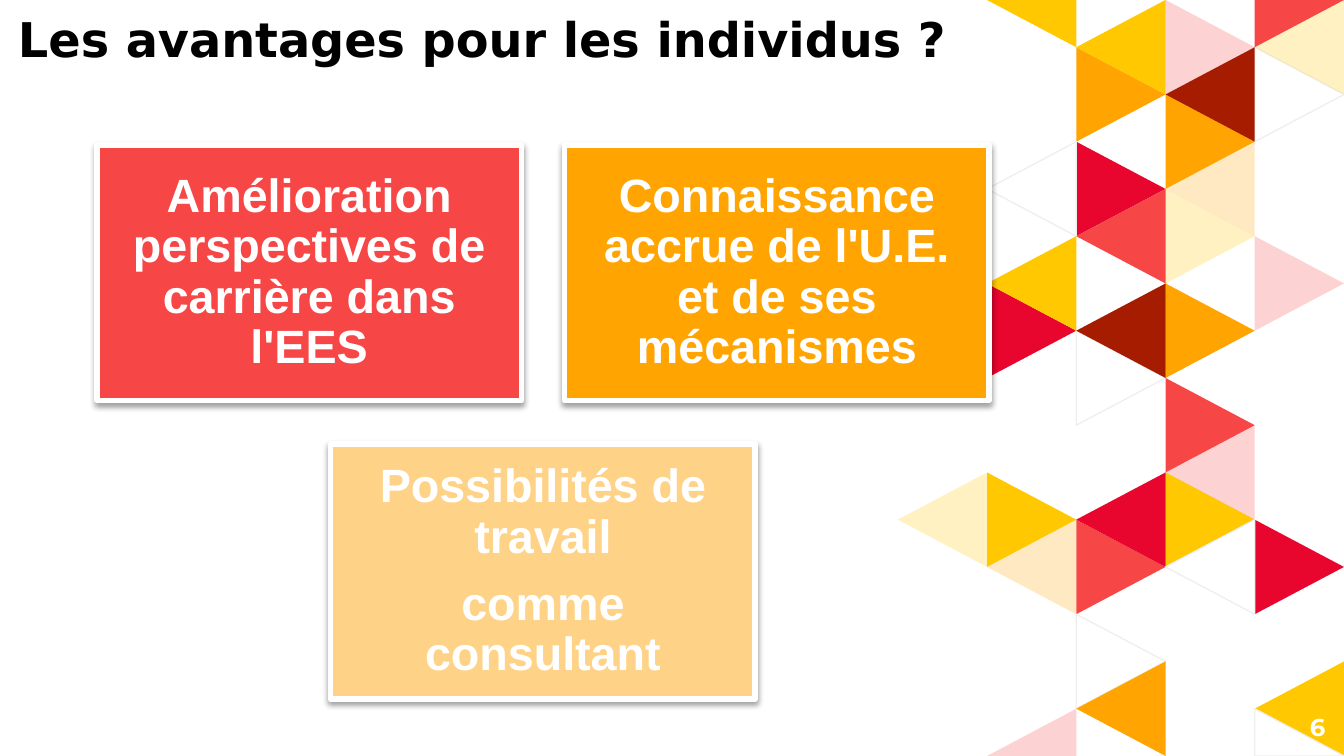
from dataclasses import dataclass
from typing import Optional

import lxml.etree
import pptx
import pptx.dml.color
import pptx.enum.shapes
import pptx.enum.text
import pptx.oxml.ns
import pptx.util

SLIDE_WIDTH = pptx.util.Inches(10)
SLIDE_HEIGHT = SLIDE_WIDTH * 9 // 16

MOSAIC_LEFT = 66.8
MOSAIC_COLUMNS = 5
MOSAIC_ROWS = 16

CARD_LEFT, CARD_TOP = 7.2, 19.2
CARD_WIDTH, CARD_HEIGHT = 31.6, 33.8
CARD_PITCH_X, CARD_PITCH_Y = 34.8, 39.5

RED, CRIMSON, BROWN = "F64646", "E8062F", "A61C00"
ORANGE, YELLOW, PEACH = "FFA400", "FFC800", "FFD387"
WHITE, BLACK, PALE_GREY = "FFFFFF", "000000", "EFEFEF"
PALE = 24


@dataclass
class Triangle:
    """A mosaic tile two rows high; it is cut off at the slide's edges."""
    column: int
    row: int
    points_right: bool
    color: Optional[str]
    opacity: int = 100
    outlined: bool = False


@dataclass
class Card:
    column: float
    row: int
    color: str
    lines: list[str]


@dataclass
class TextStyle:
    font: str
    size: float
    color: str
    alignment: pptx.enum.text.PP_ALIGN
    line_spacing: float = 1.0
    space_between: float = 0


TRIANGLES = [
    Triangle(2, 11, True, RED),
    Triangle(2, 13, True, WHITE, outlined=True),
    Triangle(3, 2, True, ORANGE),
    Triangle(4, 1, True, WHITE, outlined=True),
    Triangle(3, 4, True, YELLOW, PALE),
    Triangle(3, 10, True, YELLOW),
    Triangle(4, 11, True, CRIMSON),
    Triangle(3, 0, True, RED, PALE),
    Triangle(4, -1, True, RED),
    Triangle(2, 10, False, CRIMSON),
    Triangle(1, 11, False, ORANGE, PALE),
    Triangle(3, 1, False, BROWN),
    Triangle(3, 3, False, ORANGE, PALE),
    Triangle(3, 9, False, RED, PALE),
    Triangle(3, 11, False, WHITE, outlined=True),
    Triangle(1, -1, False, YELLOW),
    Triangle(1, 15, False, RED, PALE),
    Triangle(2, 14, False, ORANGE),
    Triangle(4, 0, False, YELLOW, PALE),
    Triangle(4, 14, False, YELLOW),
    Triangle(2, 1, True, ORANGE),
    Triangle(2, 3, True, CRIMSON),
    Triangle(1, 3, False, WHITE, outlined=True),
    Triangle(2, 4, False, RED),
    Triangle(2, 0, False, YELLOW),
    Triangle(4, 15, True, None, outlined=True),
    Triangle(1, 6, True, CRIMSON),
    Triangle(2, 7, True, WHITE, outlined=True),
    Triangle(1, 10, True, YELLOW),
    Triangle(3, 6, True, ORANGE),
    Triangle(3, 8, True, RED),
    Triangle(4, 5, True, RED, PALE),
    Triangle(0, 10, False, YELLOW, PALE),
    Triangle(1, 5, False, YELLOW),
    Triangle(2, 6, False, BROWN),
]

CARDS = [
    Card(0, 0, RED, ["Amélioration perspectives de carrière dans l'EES"]),
    Card(1, 0, ORANGE, ["Connaissance accrue de l'U.E. et de ses mécanismes"]),
    Card(0.5, 1, PEACH, ["Possibilités de travail", "comme consultant"]),
]

CENTER = pptx.enum.text.PP_ALIGN.CENTER
RIGHT = pptx.enum.text.PP_ALIGN.RIGHT
TITLE_STYLE = TextStyle("DejaVu Sans", 25.6, BLACK, CENTER, 0.8)
CARD_STYLE = TextStyle("Arial", 25, WHITE, CENTER, 0.9, 8.8)
NUMBER_STYLE = TextStyle("Montserrat", 13, WHITE, RIGHT)


def across(percent: float) -> int:
    return round(SLIDE_WIDTH * percent / 100)


def down(percent: float) -> int:
    return round(SLIDE_HEIGHT * percent / 100)


def rgb(color: str) -> pptx.dml.color.RGBColor:
    return pptx.dml.color.RGBColor.from_string(color)


def set_opacity(color_element, percent: int) -> None:
    alpha = lxml.etree.SubElement(color_element, pptx.oxml.ns.qn("a:alpha"))
    alpha.set("val", str(percent * 1000))


def paint(shape, color: Optional[str], line_color: Optional[str], line_width: float) -> None:
    shape.shadow.inherit = False
    if color:
        shape.fill.solid()
        shape.fill.fore_color.rgb = rgb(color)
    else:
        shape.fill.background()
    if line_color:
        shape.line.color.rgb = rgb(line_color)
        shape.line.width = pptx.util.Pt(line_width)
    else:
        shape.line.fill.background()


def add_shadow(shape) -> None:
    effects = shape._element.spPr.find(pptx.oxml.ns.qn("a:effectLst"))
    shadow = lxml.etree.SubElement(effects, pptx.oxml.ns.qn("a:outerShdw"))
    shadow.set("blurRad", str(pptx.util.Pt(3.1)))
    shadow.set("dist", str(pptx.util.Pt(1.6)))
    shadow.set("dir", str(90 * 60000))
    shadow.set("rotWithShape", "0")
    color = lxml.etree.SubElement(shadow, pptx.oxml.ns.qn("a:srgbClr"))
    color.set("val", BLACK)
    set_opacity(color, 37)


def write(shape, lines: list[str], style: TextStyle, inset_x: float, inset_y: float) -> None:
    frame = shape.text_frame
    frame.word_wrap = True
    frame.vertical_anchor = pptx.enum.text.MSO_ANCHOR.MIDDLE
    frame.margin_left = frame.margin_right = pptx.util.Inches(inset_x)
    frame.margin_top = frame.margin_bottom = pptx.util.Inches(inset_y)
    frame.text = "\n".join(lines)
    for index, paragraph in enumerate(frame.paragraphs):
        paragraph.alignment = style.alignment
        paragraph.line_spacing = style.line_spacing
        if index:
            paragraph.space_before = pptx.util.Pt(style.space_between)
        for run in paragraph.runs:
            run.font.name = style.font
            run.font.size = pptx.util.Pt(style.size)
            run.font.bold = True
            run.font.color.rgb = rgb(style.color)


def draw_triangle(slide, triangle: Triangle) -> None:
    column_width = (100 - MOSAIC_LEFT) / MOSAIC_COLUMNS
    base = triangle.column + (0 if triangle.points_right else 1)
    tip = triangle.column + (1 if triangle.points_right else 0)
    corners = [(base, triangle.row), (tip, triangle.row + 1), (base, triangle.row + 2)]
    points = [
        (across(MOSAIC_LEFT + column * column_width),
         down(min(max(row, 0), MOSAIC_ROWS) * 100 / MOSAIC_ROWS))
        for column, row in corners
    ]
    builder = slide.shapes.build_freeform(*points[0])
    builder.add_line_segments(points[1:], close=True)
    shape = builder.convert_to_shape()
    paint(shape, triangle.color, PALE_GREY if triangle.outlined else None, 0.75)
    if triangle.opacity < 100:
        set_opacity(shape._element.spPr.find(".//" + pptx.oxml.ns.qn("a:srgbClr")), triangle.opacity)


def draw_card(slide, card: Card) -> None:
    shape = slide.shapes.add_shape(
        pptx.enum.shapes.MSO_SHAPE.RECTANGLE,
        across(CARD_LEFT + card.column * CARD_PITCH_X), down(CARD_TOP + card.row * CARD_PITCH_Y),
        across(CARD_WIDTH), down(CARD_HEIGHT))
    paint(shape, card.color, WHITE, 3)
    add_shadow(shape)
    write(shape, card.lines, CARD_STYLE, 0.1, 0.1)


def main() -> None:
    presentation = pptx.Presentation()
    presentation.slide_width, presentation.slide_height = SLIDE_WIDTH, SLIDE_HEIGHT
    slide = presentation.slides.add_slide(presentation.slide_layouts[6])
    for triangle in TRIANGLES:
        draw_triangle(slide, triangle)
    number = slide.shapes.add_textbox(across(93.6), down(92.3), across(6), down(7.7))
    write(number, ["6"], NUMBER_STYLE, 0.1, 0.1)
    title = slide.shapes.add_textbox(0, 0, across(71.7), down(11.6))
    write(title, ["Les avantages pour les individus ?"], TITLE_STYLE, 0.07, 0.04)
    for card in CARDS:
        draw_card(slide, card)
    presentation.save("out.pptx")


if __name__ == "__main__":
    main()
